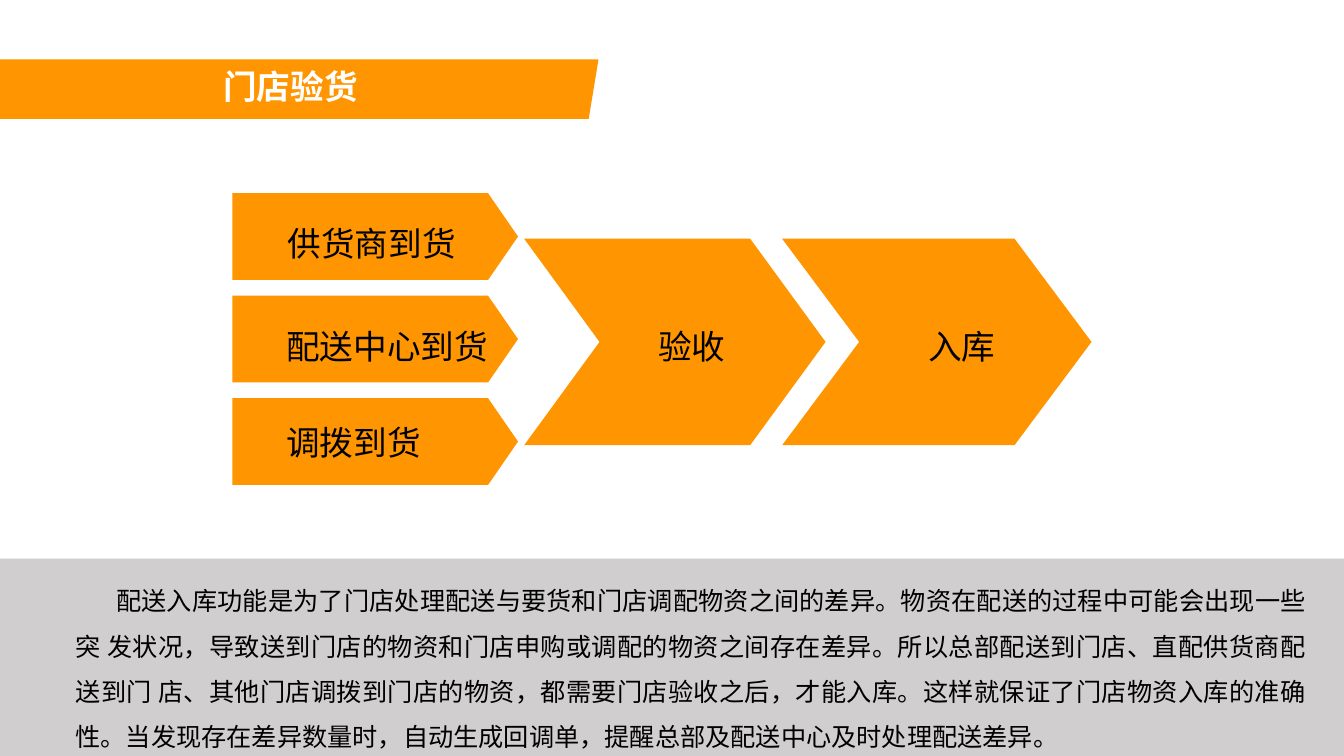
import pptx
import pptx.util
import pptx.dml.color
import pptx.enum.shapes
import pptx.enum.text
import lxml.etree

Pt = pptx.util.Pt
Kind = pptx.enum.shapes.MSO_SHAPE
Align = pptx.enum.text.PP_ALIGN
Rgb = pptx.dml.color.RGBColor.from_string

theme = {
    "orange": Rgb("FF9500"), "gray": Rgb("D0CECE"),
    "black": Rgb("000000"), "white": Rgb("FFFFFF"),
    "font": "Noto Sans CJK SC", "label": Pt(24), "body": Pt(18),
}

deck = pptx.Presentation()
deck.slide_width, deck.slide_height = Pt(960), Pt(540)
slide = deck.slides.add_slide(deck.slide_layouts[5])
shapes = slide.shapes


def paint(shape, color):
    shape.shadow.inherit = False
    shape.fill.solid()
    shape.fill.fore_color.rgb = color
    shape.line.fill.background()


def write(box, text, size, color, align=Align.LEFT, bold=False, left=0, first=0, lead=1.0):
    frame = box.text_frame
    style = {
        "margin_left": 0, "margin_top": 0, "margin_right": 0, "margin_bottom": 0,
        "word_wrap": True, "vertical_anchor": pptx.enum.text.MSO_ANCHOR.TOP,
        "auto_size": pptx.enum.text.MSO_AUTO_SIZE.NONE,
    }
    for key, value in style.items():
        setattr(frame, key, value)
    frame.text = text
    para = frame.paragraphs[0]
    para.alignment, para.line_spacing = align, lead
    props = para._p.get_or_add_pPr()
    props.set("marL", str(Pt(left)))
    props.set("indent", str(Pt(first)))
    font = para.runs[0].font
    for key, value in {"name": theme["font"], "size": size, "bold": bold}.items():
        setattr(font, key, value)
    font.color.rgb = color
    latin = font._element.find(pptx.oxml.ns.qn("a:latin"))
    east = lxml.etree.Element(pptx.oxml.ns.qn("a:ea"), typeface=theme["font"])
    latin.addnext(east)


pen = shapes.build_freeform(Pt(420.5), Pt(85), scale=1.0)
pen.add_line_segments([(Pt(0), Pt(85)), (Pt(0), Pt(42.5)), (Pt(427.5), Pt(42.5))])
banner = pen.convert_to_shape()
paint(banner, theme["orange"])

title = shapes.title
for key, value in {"left": 0.5, "top": 46.8, "width": 958, "height": 29.5}.items():
    setattr(title, key, Pt(value))
write(title, "门店验货", theme["label"], theme["white"], bold=True, left=159)
banner.element.addnext(title.element)

sources = [("供货商到货", 205.5, 159), ("配送中心到货", 204.5, 232.6), ("调拨到货", 204.5, 301.7)]
steps = [("验收", 374.4, 215.3, 0.365, 470), ("入库", 558.7, 221, 0.373, 663)]
labels = []

for row, (text, left, top) in enumerate(sources):
    arrow = shapes.add_shape(Kind.PENTAGON, Pt(166), Pt(138 + 73.2 * row), Pt(204), Pt(62))
    arrow.adjustments[0] = 0.345
    paint(arrow, theme["orange"])
    labels.append((text, left, top))

for text, left, width, tip, start in steps:
    arrow = shapes.add_shape(Kind.CHEVRON, Pt(left), Pt(170.5), Pt(width), Pt(147.5))
    arrow.adjustments[0] = tip
    paint(arrow, theme["orange"])
    labels.append((text, start, 232.6))

for text, left, top in labels:
    box = shapes.add_textbox(Pt(left), Pt(top), Pt(165), Pt(29))
    write(box, text, theme["label"], theme["black"])

panel = shapes.add_shape(Kind.RECTANGLE, Pt(0), Pt(399), Pt(960), Pt(141))
paint(panel, theme["gray"])
note = (
    "配送入库功能是为了门店处理配送与要货和门店调配物资之间的差异。"
    "物资在配送的过程中可能会出现一些突 发状况，导致送到门店的物资和门店申购或调配的物资之间存在差异。"
    "所以总部配送到门店、直配供货商配送到门 店、其他门店调拨到门店的物资，都需要门店验收之后，才能入库。"
    "这样就保证了门店物资入库的准确性。"
    "当发现存在差异数量时，自动生成回调单，提醒总部及配送中心及时处理配送差异。"
)
box = shapes.add_textbox(Pt(53.3), Pt(407.5), Pt(880), Pt(127))
write(box, note, theme["body"], theme["black"], Align.JUSTIFY, left=0.7, first=29, lead=1.5)

deck.save("out.pptx")
